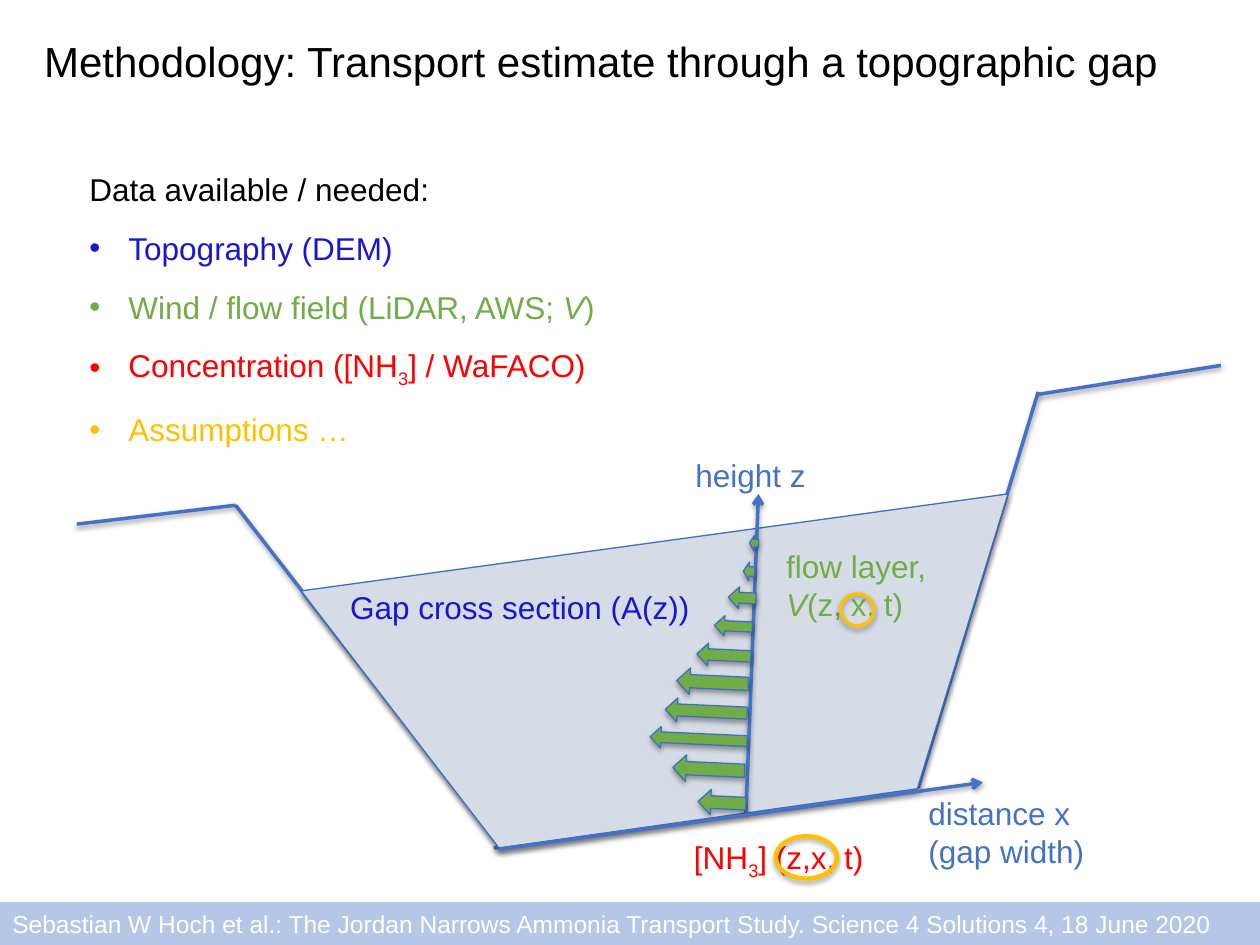
from dataclasses import dataclass

from lxml.etree import SubElement
from pptx import Presentation
from pptx.dml.color import RGBColor
from pptx.enum.shapes import MSO_CONNECTOR, MSO_SHAPE
from pptx.enum.text import MSO_ANCHOR, MSO_AUTO_SIZE, PP_ALIGN
from pptx.oxml.ns import qn
from pptx.util import Inches, Pt


@dataclass(frozen=True)
class Theme:
    font: str = "Arial"
    black: str = "000000"
    white: str = "FFFFFF"
    band: str = "B4C7E7"
    terrain: str = "4472C4"
    outline: str = "3F6FC3"
    section: str = "D6DCE5"
    topography: str = "1916D3"
    wind: str = "70AD47"
    ammonia: str = "FF0000"
    assumption: str = "FFC000"
    title_size: int = 24
    body_size: int = 18
    footer_size: int = 14


THEME = Theme()
ITALIC, SUBSCRIPT = "italic", "subscript"


def rgb(code):
    return RGBColor.from_string(code)


def write(paragraph, *parts, color=THEME.black, size=THEME.body_size, after=0):
    """Fill a paragraph; a part is plain text or a (text, style) pair."""
    paragraph.alignment = PP_ALIGN.LEFT
    paragraph.space_before, paragraph.space_after = Pt(0), Pt(after)
    for part in parts:
        text, style = (part, None) if isinstance(part, str) else part
        run = paragraph.add_run()
        run.text = text
        run.font.name, run.font.size = THEME.font, Pt(size)
        run.font.color.rgb = rgb(color)
        if style == ITALIC:
            run.font.italic = True
        elif style == SUBSCRIPT:
            run.font._element.set("baseline", "-25000")


def set_bullet(paragraph, char=None, indent=0.31):
    """Give the paragraph a hanging bullet, or none."""
    props = paragraph._p.get_or_add_pPr()
    hang = Inches(indent) if char else 0
    props.set("marL", str(hang))
    props.set("indent", str(-hang))
    if char:
        SubElement(props, qn("a:buChar"), char=char)
    else:
        SubElement(props, qn("a:buNone"))


def place(box, left, top, width, height):
    """Position a text holder and return its frame, set to one line per paragraph."""
    box.left, box.top = Inches(left), Inches(top)
    box.width, box.height = Inches(width), Inches(height)
    frame = box.text_frame
    frame.word_wrap = False
    frame.auto_size = MSO_AUTO_SIZE.NONE
    frame.vertical_anchor = MSO_ANCHOR.TOP
    return frame


def add_label(shapes, at, lines, color):
    frame = place(shapes.add_textbox(0, 0, 0, 0), *at)
    for i, parts in enumerate(lines):
        write(frame.add_paragraph() if i else frame.paragraphs[0], *parts, color=color)


def cast_shadow(shape, distance=1.8, opacity=35):
    """Soft shadow straight below; call after fill and line are set."""
    effects = SubElement(shape._element.spPr, qn("a:effectLst"))
    shadow = SubElement(effects, qn("a:outerShdw"), blurRad=str(Pt(3.1)),
                        dist=str(Pt(distance)), dir="5400000", rotWithShape="0")
    tint = SubElement(shadow, qn("a:srgbClr"), val=THEME.black)
    SubElement(tint, qn("a:alpha"), val=str(opacity * 1000))


def add_line(shapes, start, end, arrow=False):
    line = shapes.add_connector(MSO_CONNECTOR.STRAIGHT, *map(Inches, start + end))
    line.line.color.rgb = rgb(THEME.terrain)
    line.line.width = Pt(2)
    if arrow:
        SubElement(line.line._get_or_add_ln(), qn("a:tailEnd"), type="arrow")
    cast_shadow(line, distance=1.6, opacity=38)


def paint(shape, fill, outline=None):
    shape.fill.solid()
    shape.fill.fore_color.rgb = rgb(fill)
    if outline:
        shape.line.color.rgb = rgb(outline)
        shape.line.width = Pt(0.75)
    else:
        shape.line.fill.background()


def add_cross_section(shapes, corners):
    points = [(Inches(x), Inches(y)) for x, y in corners]
    builder = shapes.build_freeform(*points[0], scale=1.0)
    builder.add_line_segments(points[1:], close=True)
    section = builder.convert_to_shape()
    paint(section, THEME.section, THEME.outline)
    cast_shadow(section)


def add_flow_arrow(shapes, *at):
    arrow = shapes.add_shape(MSO_SHAPE.LEFT_ARROW, *map(Inches, at))
    arrow.rotation = 2.6
    paint(arrow, THEME.wind, THEME.outline)
    cast_shadow(arrow)


def add_ring(shapes, *at):
    ring = shapes.add_shape(MSO_SHAPE.DONUT, *map(Inches, at))
    ring.adjustments[0] = 0.094
    paint(ring, THEME.assumption)
    cast_shadow(ring)


def add_footer(shapes, text):
    band = shapes.add_shape(MSO_SHAPE.RECTANGLE, 0, 0, 0, 0)
    band.shadow.inherit = False
    paint(band, THEME.band)
    frame = place(band, 0, 7.16, 10, 0.34)
    frame.vertical_anchor = MSO_ANCHOR.MIDDLE
    write(frame.paragraphs[0], text, color=THEME.white, size=THEME.footer_size)


def main():
    deck = Presentation()
    deck.slide_width, deck.slide_height = Inches(10), Inches(7.5)
    slide = deck.slides.add_slide(deck.slide_layouts[1])
    shapes = slide.shapes

    # Title and data list
    title = place(shapes.title, 0.25, 0.23, 9.23, 0.5)
    write(title.paragraphs[0], "Methodology: Transport estimate through a topographic gap",
          size=THEME.title_size)
    data_list = place(slide.placeholders[1], 0.61, 1.3, 4.25, 2.29)
    heading = data_list.paragraphs[0]
    write(heading, "Data available / needed:", after=12)
    set_bullet(heading)
    for color, parts in (
        (THEME.topography, ["Topography (DEM)"]),
        (THEME.wind, ["Wind / flow field (LiDAR, AWS; ", ("V", ITALIC), ")"]),
        (THEME.ammonia, ["Concentration ([NH", ("3", SUBSCRIPT), "] / WaFACO)"]),
        (THEME.assumption, ["Assumptions …"]),
    ):
        item = data_list.add_paragraph()
        write(item, *parts, color=color, after=12)
        set_bullet(item, "•")

    add_footer(shapes, "Sebastian W Hoch et al.: The Jordan Narrows Ammonia Transport Study. "
                       "Science 4 Solutions 4, 18 June 2020")

    # Valley terrain
    for start, end in (
        ((1.87, 4.01), (3.97, 6.72)),
        ((3.92, 6.73), (7.3, 6.24)),
        ((7.29, 6.24), (8.24, 3.11)),
        ((0.61, 4.16), (1.87, 4.01)),
        ((8.24, 3.13), (9.69, 2.9)),
    ):
        add_line(shapes, start, end)

    # Gap cross section
    gap = shapes.add_group_shape().shapes
    add_cross_section(gap, [(2.39, 4.69), (8, 3.92), (7.28, 6.26), (3.96, 6.73)])
    add_label(gap, (2.68, 4.62, 2.92, 0.4), [["Gap cross section (A(z))"]], THEME.topography)

    # Wind profile along the height axis, top to bottom
    profile = shapes.add_group_shape().shapes
    add_line(profile, (5.92, 6.46), (6.02, 3.92), arrow=True)
    for flow in (
        (5.95, 4.25, 0.07, 0.12), (5.9, 4.46, 0.09, 0.15), (5.78, 4.66, 0.22, 0.17),
        (5.67, 4.89, 0.3, 0.16), (5.53, 5.11, 0.43, 0.18), (5.37, 5.31, 0.57, 0.21),
        (5.28, 5.55, 0.65, 0.19), (5.16, 5.78, 0.77, 0.17), (5.34, 6, 0.57, 0.21),
        (5.54, 6.27, 0.38, 0.2),
    ):
        add_flow_arrow(profile, *flow)

    # Distance axis and labels
    add_line(shapes, (3.96, 6.74), (7.8, 6.21), arrow=True)
    for at, lines, color in (
        ((6.14, 4.29, 1.32, 0.71), [["flow layer,"], [("V", ITALIC), "(z, x, t)"]], THEME.wind),
        ((5.41, 6.6, 1.57, 0.4), [["[NH", ("3", SUBSCRIPT), "] (z,x, t)"]], THEME.ammonia),
        ((5.42, 3.57, 1.13, 0.4), [["height z"]], THEME.terrain),
        ((7.27, 6.25, 1.45, 0.71), [["distance x"], ["(gap width)"]], THEME.terrain),
    ):
        add_label(shapes, at, lines, color)

    # Rings around the assumed variables
    add_ring(shapes, 6.66, 4.7, 0.29, 0.28)
    add_ring(shapes, 6.14, 6.62, 0.52, 0.37)

    deck.save("out.pptx")


if __name__ == "__main__":
    main()
